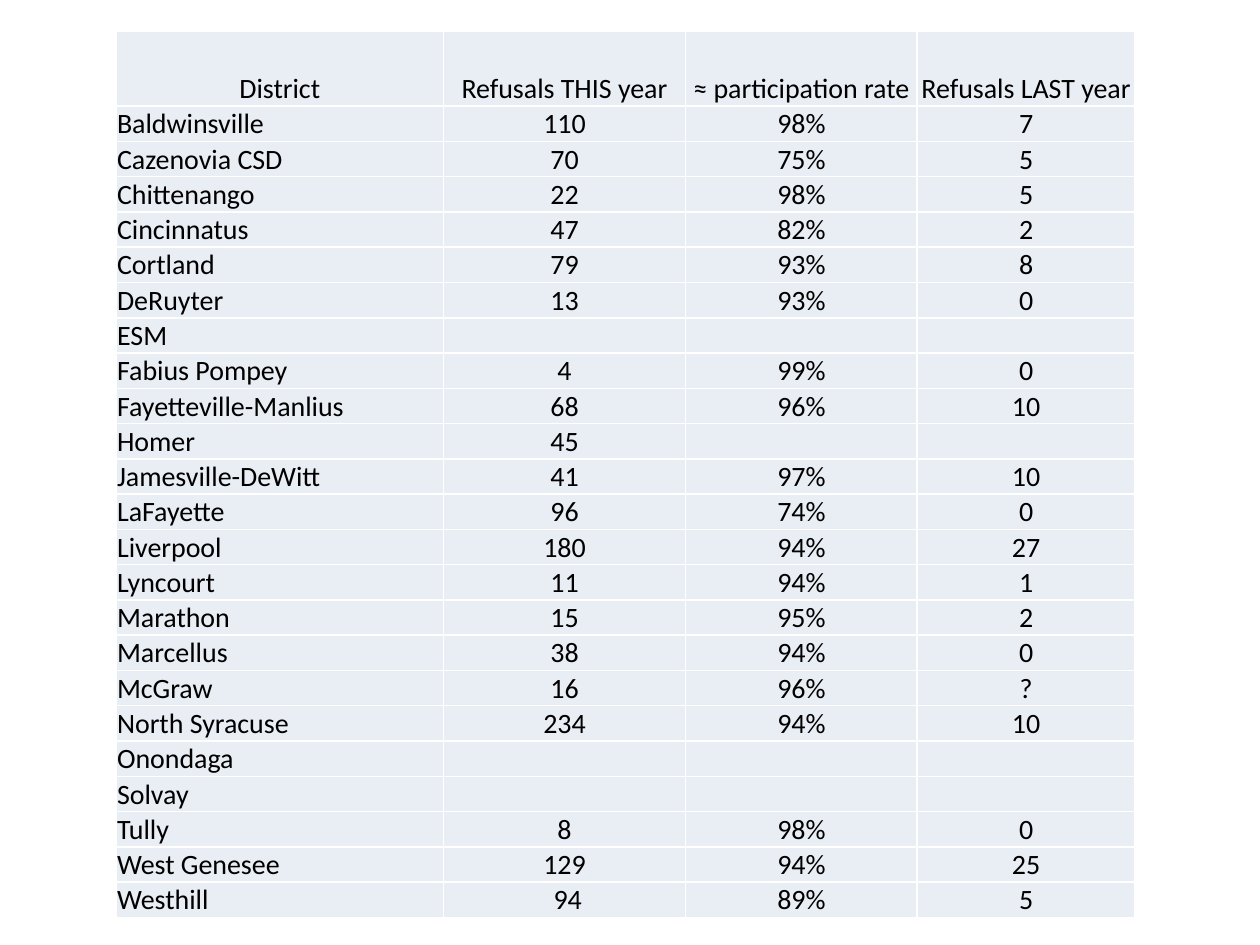
"""Build a slide with a table of test refusals by school district."""
import dataclasses

import lxml.etree
import pptx
import pptx.dml.color
import pptx.enum.text
import pptx.oxml.ns
import pptx.util

Cm = pptx.util.Cm
Align = pptx.enum.text.PP_ALIGN


@dataclasses.dataclass(frozen=True)
class Theme:
    font: str = "Calibri"
    text_size: int = 16
    text_color: str = "000000"
    cell_fill: str = "E9EDF4"
    border_color: str = "FFFFFF"
    border_width: int = 1
    inset: float = 0.02


HEADINGS = ("District", "Refusals THIS year", "≈ participation rate", "Refusals LAST year")
DISTRICTS = (
    ("Baldwinsville", "110", "98%", "7"),
    ("Cazenovia CSD", "70", "75%", "5"),
    ("Chittenango", "22", "98%", "5"),
    ("Cincinnatus", "47", "82%", "2"),
    ("Cortland", "79", "93%", "8"),
    ("DeRuyter", "13", "93%", "0"),
    ("ESM", "", "", ""),
    ("Fabius Pompey", "4", "99%", "0"),
    ("Fayetteville-Manlius", "68", "96%", "10"),
    ("Homer", "45", "", ""),
    ("Jamesville-DeWitt", "41", "97%", "10"),
    ("LaFayette", "96", "74%", "0"),
    ("Liverpool", "180", "94%", "27"),
    ("Lyncourt", "11", "94%", "1"),
    ("Marathon", "15", "95%", "2"),
    ("Marcellus", "38", "94%", "0"),
    ("McGraw", "16", "96%", "?"),
    ("North Syracuse", "234", "94%", "10"),
    ("Onondaga", "", "", ""),
    ("Solvay", "", "", ""),
    ("Tully", "8", "98%", "0"),
    ("West Genesee", "129", "94%", "25"),
    ("Westhill", " 94", "89%", "5"),
)
COLUMN_WIDTHS = (6.6, 4.88, 4.67, 4.39)
HEADING_HEIGHT = 1.5
DISTRICT_HEIGHT = 0.7


def write_text(paragraph, text, *, font, size, color, align):
    """Fill a paragraph with text, or size its empty line when there is none."""
    paragraph.alignment = align
    if not text:
        tag = pptx.oxml.ns.qn("a:endParaRPr")
        lxml.etree.SubElement(paragraph._p, tag, sz=str(size * 100))
        return
    run = paragraph.add_run()
    run.text = text
    run.font.name = font
    run.font.size = pptx.util.Pt(size)
    run.font.bold = False
    run.font.color.rgb = pptx.dml.color.RGBColor.from_string(color)


class SlideBuilder:
    """Hold the theme and the current slide."""

    def __init__(self, slide, theme):
        """Keep the slide to draw on and its theme."""
        self.slide = slide
        self.theme = theme

    def table(self, rows, left, top, widths, heights):
        """Add a table whose first column of body rows is left aligned."""
        frame = self.slide.shapes.add_table(
            len(rows), len(widths), Cm(left), Cm(top), Cm(sum(widths)), Cm(sum(heights)))
        grid = frame.table
        grid.first_row = False
        grid.horz_banding = False
        for column, width in zip(grid.columns, widths):
            column.width = Cm(width)
        for row, height in zip(grid.rows, heights):
            row.height = Cm(height)
        for row_number, entries in enumerate(rows):
            for column_number, entry in enumerate(entries):
                is_name = row_number > 0 and column_number == 0
                align = Align.LEFT if is_name else Align.CENTER
                self.cell(grid.cell(row_number, column_number), entry, align)

    def cell(self, cell, text, align):
        """Style one table cell and write its text."""
        theme = self.theme
        cell.margin_left = cell.margin_right = cell.margin_top = Cm(theme.inset)
        cell.margin_bottom = 0
        cell.vertical_anchor = pptx.enum.text.MSO_ANCHOR.BOTTOM
        self.borders(cell)
        cell.fill.solid()
        cell.fill.fore_color.rgb = pptx.dml.color.RGBColor.from_string(theme.cell_fill)
        write_text(cell.text_frame.paragraphs[0], text, font=theme.font,
                   size=theme.text_size, color=theme.text_color, align=align)

    def borders(self, cell):
        """Draw a solid line on all four sides of a cell."""
        qn = pptx.oxml.ns.qn
        properties = cell._tc.get_or_add_tcPr()
        width = str(pptx.util.Pt(self.theme.border_width))
        for side in ("a:lnL", "a:lnR", "a:lnT", "a:lnB"):
            line = lxml.etree.SubElement(properties, qn(side), w=width)
            fill = lxml.etree.SubElement(line, qn("a:solidFill"))
            lxml.etree.SubElement(fill, qn("a:srgbClr"), val=self.theme.border_color)


def main():
    """Build the presentation and save it."""
    presentation = pptx.Presentation()
    presentation.slide_width = Cm(25.4)
    presentation.slide_height = Cm(19.05)
    slide = presentation.slides.add_slide(presentation.slide_layouts[6])
    heights = [HEADING_HEIGHT] + [DISTRICT_HEIGHT] * len(DISTRICTS)
    SlideBuilder(slide, Theme()).table(
        (HEADINGS, *DISTRICTS), 2.34, 0.64, COLUMN_WIDTHS, heights)
    presentation.save("out.pptx")


if __name__ == "__main__":
    main()
